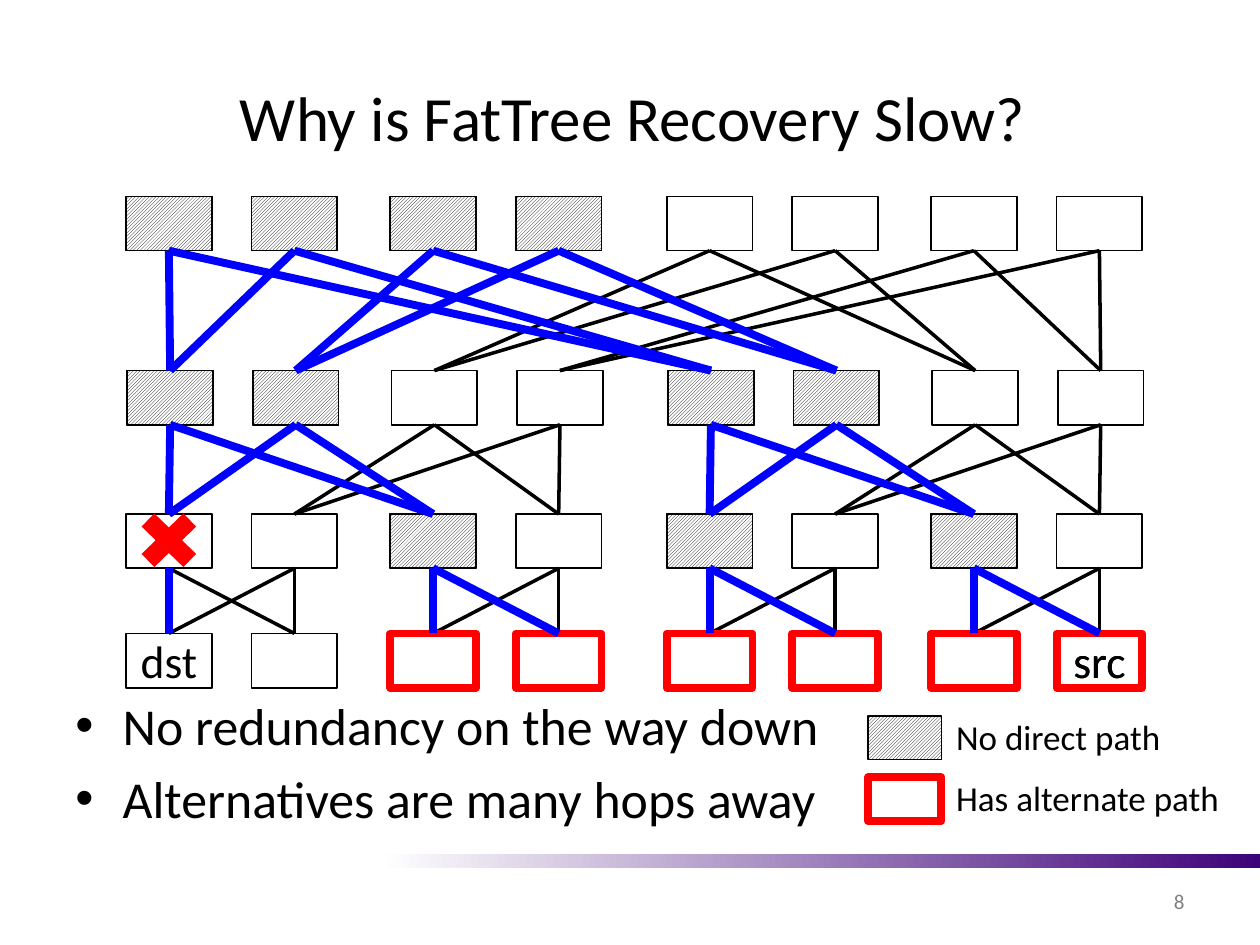
"""Build the slide on why FatTree recovery is slow."""
from dataclasses import dataclass
from typing import Optional

from lxml.etree import SubElement
from pptx import Presentation
from pptx.dml.color import RGBColor
from pptx.enum.dml import MSO_PATTERN
from pptx.enum.shapes import MSO_CONNECTOR, MSO_SHAPE
from pptx.enum.text import MSO_ANCHOR as Anchor, PP_ALIGN as Align
from pptx.oxml.ns import qn
from pptx.util import Pt

COLORS = {
    "black": "000000", "white": "FFFFFF", "alternate": "FF0000",
    "affected": "0000FF", "page": "808080", "band": "3D0278",
}
FONT = "Calibri"
NODE_WIDTH, NODE_HEIGHT, PAIR_STEP = 49, 31, 71.75
PAIR_LEFTS = (72, 223, 381, 532)
BOTTOM, TOP = 2, 0


@dataclass(frozen=True)
class Box:
    left: float
    top: float
    width: float
    height: float

    def emu(self) -> tuple:
        return Pt(self.left), Pt(self.top), Pt(self.width), Pt(self.height)


@dataclass(frozen=True)
class Style:
    line: str = "black"
    weight: float = 1
    hatched: bool = False


@dataclass(frozen=True)
class Tier:
    top: float
    shift: float
    affected: tuple
    highlighted: tuple
    highlight: Style


@dataclass(frozen=True)
class Link:
    upper: int
    lower: int


PLAIN = Style()
NO_DIRECT = Style(hatched=True)
ALTERNATE = Style("alternate", 4.5)
TIERS = (
    Tier(112.25, 0, (0, 1, 2, 3), (0, 1, 2, 3), NO_DIRECT),
    Tier(211.75, 0.75, (0, 1, 4, 5), (0, 1, 4, 5), NO_DIRECT),
    Tier(293.75, 0, (0, 2, 4, 6), (2, 4, 6), NO_DIRECT),
    Tier(362, 0, (0, 2, 3, 4, 5, 6, 7), (2, 3, 4, 5, 6, 7), ALTERNATE),
)
FIRST_UPLINKS = (
    [2 * (i % 4) for i in range(8)],
    [4 * (i // 4) + 2 * (i % 2) for i in range(8)],
    [2 * (i // 2) for i in range(8)],
)
HOST_LABELS = {(3, 0): "dst", (3, 7): "src"}
LEGEND = (
    (Box(496, 409, 42, 25), NO_DIRECT, Box(539.25, 405.5, 201.5, 31.5), "No direct path"),
    (Box(496, 444.25, 42, 25), ALTERNATE, Box(539.25, 440, 167, 31.5), "Has alternate path"),
)
BULLETS = ("No redundancy on the way down", "Alternatives are many hops away")


def rgb(name: str) -> RGBColor:
    return RGBColor.from_string(COLORS[name])


def write(paragraph, text: str, size: float, color: str = "black",
          align: Align = Align.LEFT) -> None:
    paragraph.alignment = align
    run = paragraph.add_run()
    run.text = text
    run.font.name, run.font.size = FONT, Pt(size)
    run.font.color.rgb = rgb(color)


def add_preset(slide, preset: MSO_SHAPE, box: Box):
    shape = slide.shapes.add_shape(preset, *box.emu())
    shape.shadow.inherit = False
    shape.line.fill.background()
    return shape


def add_switch(slide, box: Box, style: Style, label: Optional[str] = None):
    switch = add_preset(slide, MSO_SHAPE.RECTANGLE, box)
    switch.line.color.rgb = rgb(style.line)
    switch.line.width = Pt(style.weight)
    if style.hatched:
        switch.fill.patterned()
        switch.fill.pattern = MSO_PATTERN.LIGHT_UPWARD_DIAGONAL
        switch.fill.fore_color.rgb = rgb("black")
        switch.fill.back_color.rgb = rgb("white")
    else:
        switch.fill.background()
    if label:
        frame = switch.text_frame
        frame.word_wrap = False
        frame.vertical_anchor = Anchor.MIDDLE
        write(frame.paragraphs[0], label, 26, align=Align.CENTER)
    return switch


def add_node(slide, row: int, index: int, style: Style):
    tier = TIERS[row]
    pair, side = divmod(index, 2)
    left = PAIR_LEFTS[pair] + side * PAIR_STEP + tier.shift
    box = Box(left, tier.top, NODE_WIDTH, NODE_HEIGHT)
    return add_switch(slide, box, style, HOST_LABELS.get((row, index)))


def add_link(slide, upper, lower, color: str, weight: float) -> None:
    link = slide.shapes.add_connector(
        MSO_CONNECTOR.STRAIGHT,
        upper.left + upper.width // 2, upper.top + upper.height,
        lower.left + lower.width // 2, lower.top)
    link.begin_connect(upper, BOTTOM)
    link.end_connect(lower, TOP)
    link.line.color.rgb = rgb(color)
    link.line.width = Pt(weight)
    SubElement(link._element.spPr, qn("a:effectLst"))


def add_text(slide, box: Box, wrap: bool = True):
    frame = slide.shapes.add_textbox(*box.emu()).text_frame
    frame.word_wrap = wrap
    return frame


def add_band(slide) -> None:
    band = add_preset(slide, MSO_SHAPE.RECTANGLE, Box(129, 488, 591, 8))
    band.fill.gradient()
    band.fill.gradient_angle = 0
    for stop, position, color in zip(band.fill.gradient_stops, (0.15, 1), ("white", "band")):
        stop.position = position
        stop.color.rgb = rgb(color)


def add_title(slide) -> None:
    title = slide.shapes.title
    title.left, title.top, title.width, title.height = Box(19.5, 21.5, 684, 90).emu()
    title.text_frame.vertical_anchor = Anchor.MIDDLE
    write(title.text_frame.paragraphs[0], "Why is FatTree Recovery Slow?", 36, align=Align.CENTER)


def add_bullets(slide) -> None:
    frame = add_text(slide, Box(36, 393, 466.5, 89))
    for number, bullet in enumerate(BULLETS):
        paragraph = frame.add_paragraph() if number else frame.paragraphs[0]
        paragraph.space_before = Pt(5.9)
        write(paragraph, bullet, 29.6)
        properties = paragraph._p.get_or_add_pPr()
        properties.set("marL", str(Pt(27)))
        properties.set("indent", str(-Pt(27)))
        SubElement(properties, qn("a:buFont")).set("typeface", "Arial")
        SubElement(properties, qn("a:buChar")).set("char", "•")


def add_network(slide) -> None:
    nodes = [[add_node(slide, row, i, PLAIN) for i in range(8)] for row in range(4)]
    links = [[Link(first + offset, lower) for lower, first in enumerate(uplinks)
              for offset in (0, 1)] for uplinks in FIRST_UPLINKS]
    for row, tier_links in enumerate(links):
        for link in tier_links:
            add_link(slide, nodes[row][link.upper], nodes[row + 1][link.lower], "black", 2)

    failure = add_preset(slide, MSO_SHAPE.MATH_MULTIPLY, Box(73.5, 286.5, 46, 44.5))
    failure.fill.solid()
    failure.fill.fore_color.rgb = rgb("alternate")

    for row, tier in enumerate(TIERS):
        for index in tier.highlighted:
            nodes[row][index] = add_node(slide, row, index, tier.highlight)
    for row, tier_links in enumerate(links):
        for link in tier_links:
            if link.upper in TIERS[row].affected and link.lower in TIERS[row + 1].affected:
                add_link(slide, nodes[row][link.upper], nodes[row + 1][link.lower], "affected", 4.5)


def main() -> None:
    deck = Presentation()
    deck.slide_width, deck.slide_height = Pt(720), Pt(540)
    slide = deck.slides.add_slide(deck.slide_layouts[5])
    add_band(slide)
    add_title(slide)
    add_bullets(slide)
    page = add_text(slide, Box(516, 500.5, 168, 28.5))
    page.vertical_anchor = Anchor.MIDDLE
    write(page.paragraphs[0], "8", 12, "page", Align.RIGHT)
    add_network(slide)
    for swatch, style, caption_box, caption in LEGEND:
        add_switch(slide, swatch, style)
        write(add_text(slide, caption_box, wrap=False).paragraphs[0], caption, 20)
    deck.save("out.pptx")


if __name__ == "__main__":
    main()
